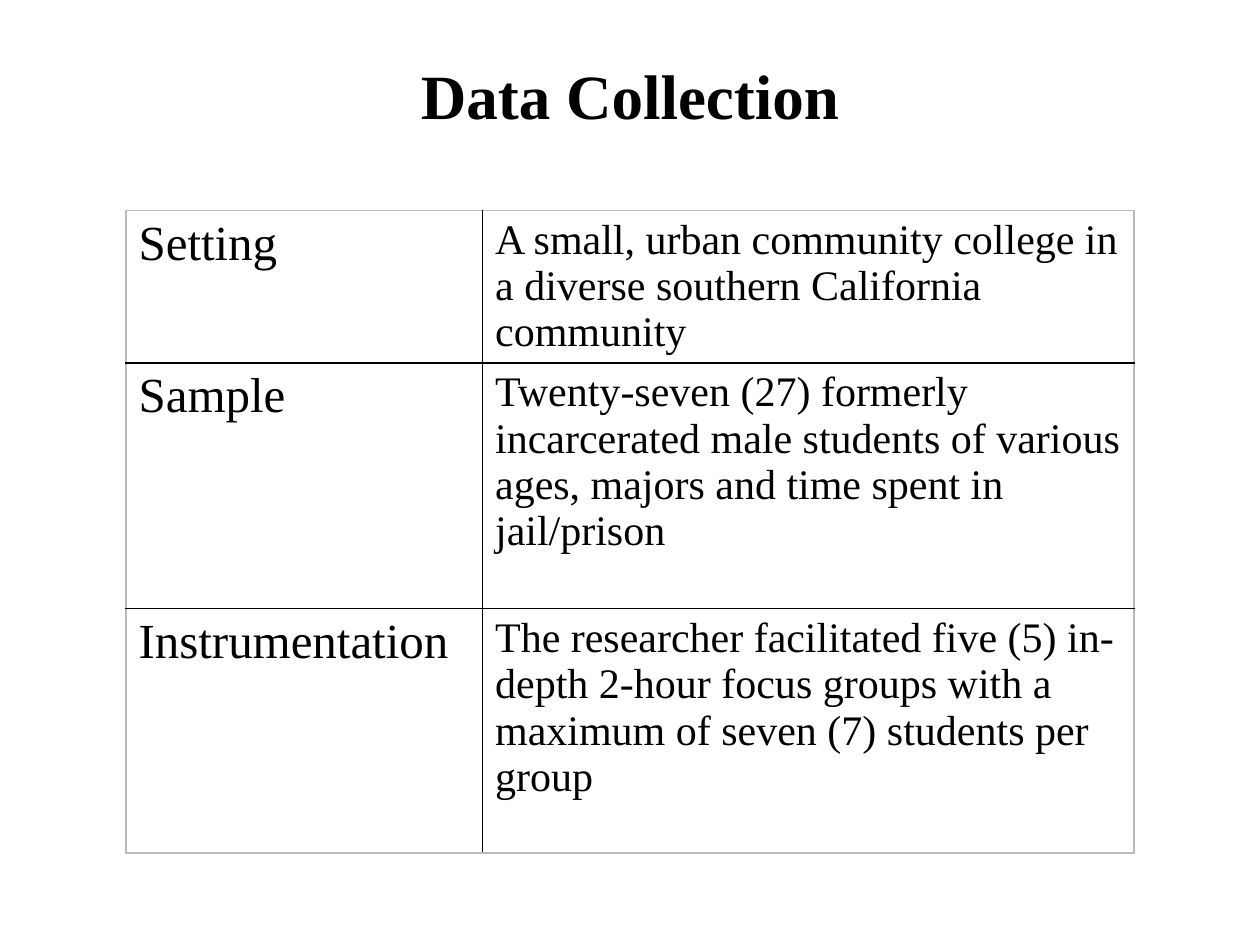
from lxml import etree
from pptx import Presentation
from pptx import util as u
from pptx.dml import color
from pptx.enum import text
from pptx.oxml import ns

FONT = "Times New Roman"
BLACK, GREY = "000000", "BBBBBB"


def set_font(p, size, bold=False):
    p.font.name = FONT
    p.font.size = u.Pt(size)
    p.font.bold = bold
    p.font.color.rgb = color.RGBColor.from_string(BLACK)


def add_border(cell, side, hex_color):
    tcPr = cell._tc.get_or_add_tcPr()
    ln = etree.SubElement(tcPr, ns.qn(f"a:ln{side}"), w=str(u.Pt(1)))
    fill = etree.SubElement(ln, ns.qn("a:solidFill"))
    etree.SubElement(fill, ns.qn("a:srgbClr"), val=hex_color)


prs = Presentation()
prs.slide_width, prs.slide_height = u.Inches(10), u.Inches(7.5)
W, H = prs.slide_width, prs.slide_height
s = prs.slides.add_slide(prs.slide_layouts[5])

left, width = W // 10, W * 8 // 10
title = s.shapes.title
title.left, title.top, title.width, title.height = left, H // 30, width, H * 4 // 30
tf = title.text_frame
tf.text = "Data Collection"
tf.vertical_anchor = text.MSO_ANCHOR.MIDDLE
tf.paragraphs[0].alignment = text.PP_ALIGN.CENTER
set_font(tf.paragraphs[0], 36, bold=True)

rows = [
    ("Setting", "A small, urban community college in a diverse southern California community"),
    ("Sample", "Twenty-seven (27) formerly incarcerated male students of various ages, "
               "majors and time spent in jail/prison"),
    ("Instrumentation", "The researcher facilitated five (5) in-depth 2-hour focus groups "
                        "with a maximum of seven (7) students per group"),
]
col_widths = [2.83, 5.17]
row_heights = [1.21, 1.95, 1.94]
sizes = [28, 24]

table = s.shapes.add_table(len(rows), len(col_widths), left, u.Inches(1.67),
                           width, u.Inches(sum(row_heights))).table
table.first_row = table.horz_banding = False
for column, w in zip(table.columns, col_widths):
    column.width = u.Inches(w)
for row, h in zip(table.rows, row_heights):
    row.height = u.Inches(h)

for i, row in enumerate(rows):
    for j, words in enumerate(row):
        cell = table.cell(i, j)
        cell.text = words
        set_font(cell.text_frame.paragraphs[0], sizes[j])
        outer = {"L": j == 0, "R": j == len(row) - 1, "T": i == 0, "B": i == len(rows) - 1}
        for side, is_outer in outer.items():
            add_border(cell, side, GREY if is_outer else BLACK)
        cell.fill.background()

prs.save("out.pptx")
